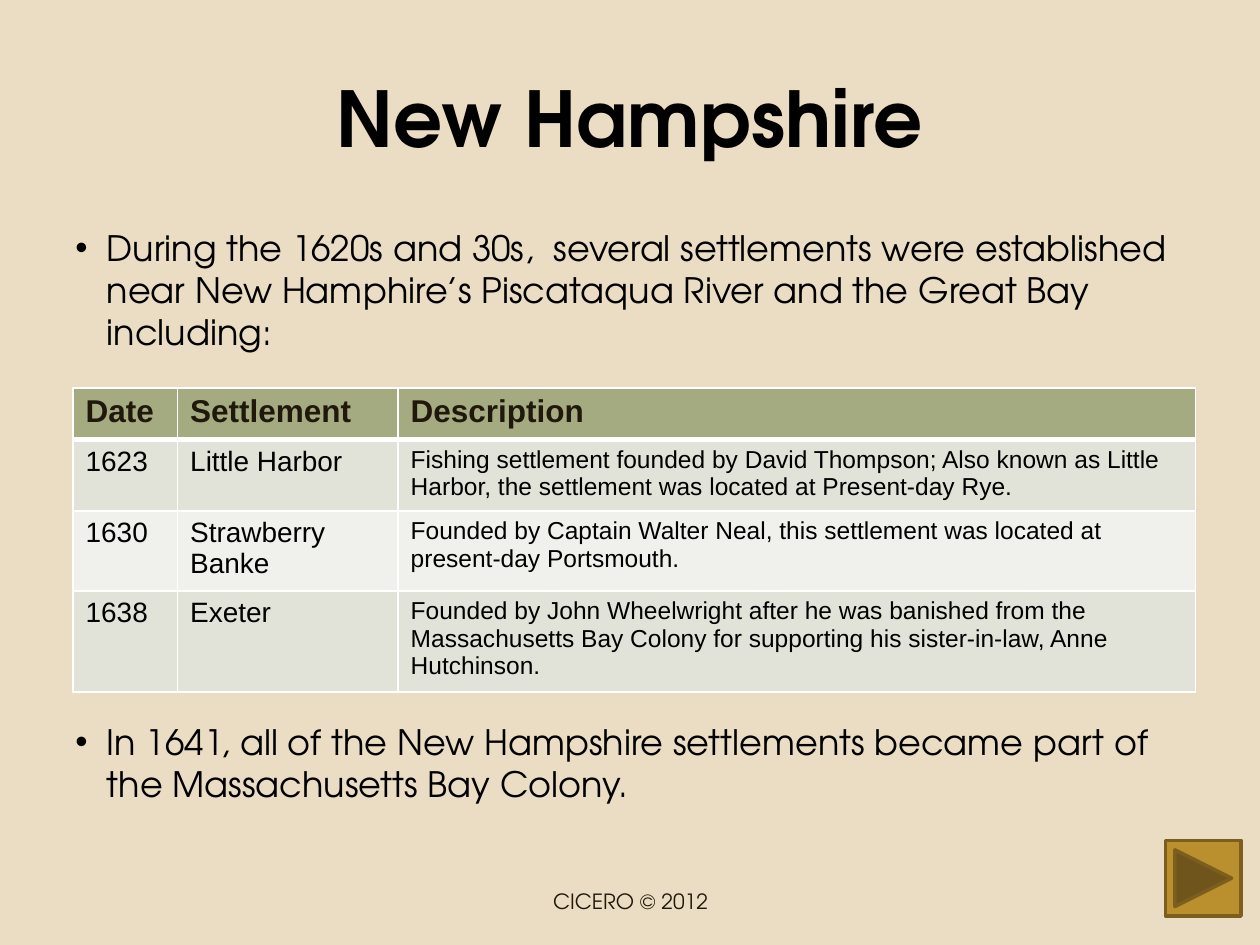
from lxml import etree
from pptx import Presentation
from pptx.dml.color import RGBColor
from pptx.enum.shapes import MSO_SHAPE
from pptx.enum.text import MSO_ANCHOR, PP_ALIGN
from pptx.oxml.ns import qn
from pptx.util import Inches, Pt

CENTER = PP_ALIGN.CENTER
TOP, MIDDLE = MSO_ANCHOR.TOP, MSO_ANCHOR.MIDDLE
NEXT_BUTTON = MSO_SHAPE.ACTION_BUTTON_FORWARD_OR_NEXT
DISPLAY_FONT, TABLE_FONT = "TeX Gyre Adventor", "Arial"
BLACK, BROWN, WHITE = "000000", "20190B", "FFFFFF"
HEADER_FILL, BAND_FILLS = "A5AB81", ("E1E2D8", "F0F1ED")

COLUMN_WIDTHS = (0.83, 1.75, 6.33)
ROW_HEIGHTS = (0.41, 0.53, 0.6, 0.76)
SETTLEMENTS = (
    ("Date", "Settlement", "Description"),
    ("1623", "Little Harbor",
     "Fishing settlement founded by David Thompson; Also known as Little Harbor, "
     "the settlement was located at Present-day Rye."),
    ("1630", "Strawberry Banke",
     "Founded by Captain Walter Neal, this settlement was located at "
     "present-day Portsmouth."),
    ("1638", "Exeter",
     "Founded by John Wheelwright after he was banished from the Massachusetts Bay "
     "Colony for supporting his sister-in-law, Anne Hutchinson."),
)
BULLETS = (
    ("During the 1620s and 30s,  several settlements were established near "
     "New Hamphire’s Piscataqua River and the Great Bay including:", 0),
    ("In 1641, all of the New Hampshire settlements became part of "
     "the Massachusetts Bay Colony.", 204),
)


def color(value):
    """Turn a hex string into a colour."""
    return RGBColor.from_string(value)


def format_font(font, value, **settings):
    """Apply a colour and a set of font attributes."""
    for name, setting in settings.items():
        setattr(font, name, setting)
    font.color.rgb = color(value)


def add_text_box(slide, box, anchor):
    """Add an empty wrapping text box and return its frame."""
    frame = slide.shapes.add_textbox(*map(Inches, box)).text_frame
    frame.word_wrap = True
    frame.vertical_anchor = anchor
    return frame


def add_centered_line(slide, text, box, value, **settings):
    """Add one centred line of text."""
    paragraph = add_text_box(slide, box, MIDDLE).paragraphs[0]
    paragraph.text = text
    paragraph.alignment = CENTER
    format_font(paragraph.runs[0].font, value, name=DISPLAY_FONT, **settings)


def add_bullets(slide, box):
    """Add the two bullets, spaced to leave room for the table."""
    frame = add_text_box(slide, box, TOP)
    for index, (text, space_before) in enumerate(BULLETS):
        paragraph = frame.add_paragraph() if index else frame.paragraphs[0]
        paragraph.text = text
        properties = paragraph._p.get_or_add_pPr()
        properties.set("marL", str(Inches(0.25)))
        properties.set("indent", str(Inches(-0.25)))
        bullet_font = etree.SubElement(properties, qn("a:buFont"))
        bullet_font.set("typeface", TABLE_FONT)
        etree.SubElement(properties, qn("a:buChar")).set("char", "•")
        paragraph.space_before = Pt(space_before)
        paragraph.space_after = Pt(6)
        format_font(paragraph.runs[0].font, BLACK, name=DISPLAY_FONT, size=Pt(20))


def set_borders(cell, top, bottom):
    """Draw white borders with the given top and bottom widths in points."""
    properties = cell._tc.get_or_add_tcPr()
    widths = {"a:lnL": 1, "a:lnR": 1, "a:lnT": top, "a:lnB": bottom}
    for index, (tag, width) in enumerate(widths.items()):
        line = etree.Element(qn(tag), w=str(Pt(width)))
        fill = etree.SubElement(line, qn("a:solidFill"))
        etree.SubElement(fill, qn("a:srgbClr")).set("val", WHITE)
        properties.insert(index, line)


def fill_cell(cell, text, row, column):
    """Write one table cell in header or body style."""
    header = row == 0
    cell.text = text
    cell.fill.solid()
    cell.fill.fore_color.rgb = color(HEADER_FILL if header else BAND_FILLS[(row - 1) % 2])
    size = 18 if header else 14 if column == 2 else 16
    format_font(cell.text_frame.paragraphs[0].runs[0].font, BROWN if header else BLACK,
                name=TABLE_FONT, size=Pt(size), bold=header)
    set_borders(cell, top=3 if row == 1 else 1, bottom=3 if header else 1)


def add_settlement_table(slide, left, top):
    """Add the table of settlements."""
    box = (left, top, sum(COLUMN_WIDTHS), sum(ROW_HEIGHTS))
    table = slide.shapes.add_table(
        len(ROW_HEIGHTS), len(COLUMN_WIDTHS), *map(Inches, box)).table
    table.horz_banding = False
    for column, width in zip(table.columns, COLUMN_WIDTHS):
        column.width = Inches(width)
    for row, height in zip(table.rows, ROW_HEIGHTS):
        row.height = Inches(height)
    for row, texts in enumerate(SETTLEMENTS):
        for column, text in enumerate(texts):
            fill_cell(table.cell(row, column), text, row, column)


def add_next_button(slide, box):
    """Add the gold forward button."""
    shape = slide.shapes.add_shape(NEXT_BUTTON, *map(Inches, box))
    shape.shadow.inherit = False
    shape.fill.solid()
    shape.fill.fore_color.rgb = color("BA8F2D")
    shape.line.color.rgb = color("7C5F1E")
    shape.line.width = Pt(2)


def main():
    """Build and save the slide."""
    presentation = Presentation()
    presentation.slide_width, presentation.slide_height = Inches(10), Inches(7.5)
    slide = presentation.slides.add_slide(presentation.slide_layouts[6])
    slide.background.fill.solid()
    slide.background.fill.fore_color.rgb = color("EBDDC3")
    add_centered_line(slide, "New Hampshire", (0.5, 0.3, 9, 1.25), BLACK,
                      size=Pt(44), bold=True)
    add_bullets(slide, (0.5, 1.75, 9, 4.95))
    add_centered_line(slide, "CICERO © 2012", (3.42, 6.95, 3.17, 0.4), BROWN, size=Pt(12))
    add_next_button(slide, (9.25, 6.67, 0.6, 0.6))
    add_settlement_table(slide, 0.58, 3.08)
    presentation.save("out.pptx")


if __name__ == "__main__":
    main()
